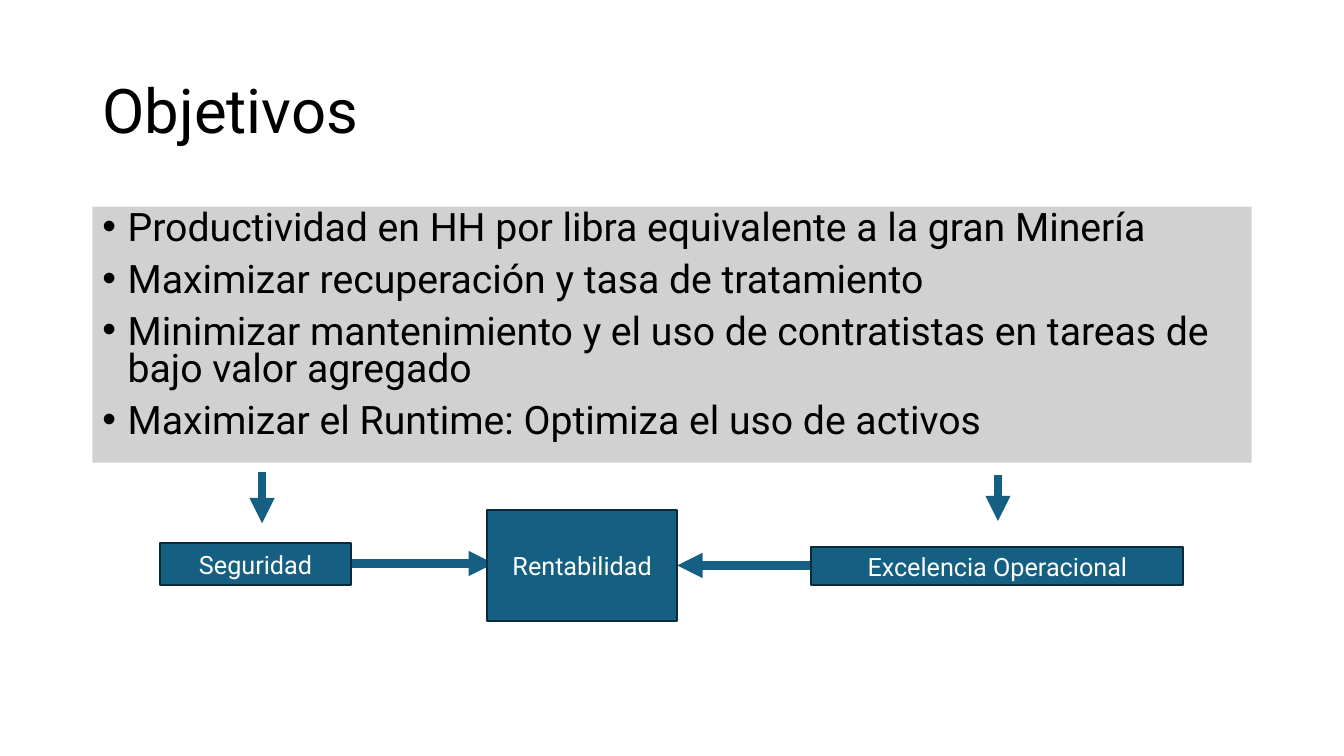
"""Build the slide of goals and the arrows that lead to profit."""
from lxml import etree
from pptx import Presentation
from pptx.dml.color import RGBColor
from pptx.enum.shapes import MSO_CONNECTOR, MSO_SHAPE
from pptx.enum.text import MSO_ANCHOR, MSO_AUTO_SIZE, PP_ALIGN
from pptx.oxml.ns import qn
from pptx.util import Pt

LEFT, MID = PP_ALIGN.LEFT, PP_ALIGN.CENTER
TOP, CENTER = MSO_ANCHOR.TOP, MSO_ANCHOR.MIDDLE
FIXED = MSO_AUTO_SIZE.NONE
RECT, LINE = MSO_SHAPE.RECTANGLE, MSO_CONNECTOR.STRAIGHT
FONT = "Roboto"
HEX = {"ink": "000000", "panel": "D1D1D1", "teal": "156082",
       "edge": "092A39", "light": "FFFFFF"}


def color(name):
    return RGBColor.from_string(HEX[name])


def style(shape, size, ink, align, anchor):
    frame = shape.text_frame
    frame.word_wrap = True
    frame.auto_size = FIXED
    frame.vertical_anchor = anchor
    for para in frame.paragraphs:
        para.alignment = align
        for run in para.runs:
            run.font.name = FONT
            run.font.size = Pt(size)
            run.font.color.rgb = color(ink)


deck = Presentation()
deck.slide_width, deck.slide_height = Pt(960), Pt(540)
slide = deck.slides.add_slide(deck.slide_layouts[1])

title = slide.shapes.title
title.left, title.top, title.width, title.height = Pt(66), Pt(28.75), Pt(828), Pt(104.4)
title.text_frame.text = "Objetivos"
title.text_frame.paragraphs[0].line_spacing = 0.9
style(title, 44, "ink", LEFT, CENTER)

goals = [
    "Productividad en HH por libra equivalente a la gran Minería",
    "Maximizar recuperación y tasa de tratamiento",
    "Minimizar mantenimiento y el uso de contratistas en tareas de bajo valor agregado",
    "Maximizar el Runtime: Optimiza el uso de activos",
]
body = slide.placeholders[1]
body.left, body.top, body.width, body.height = Pt(66), Pt(147.6), Pt(828), Pt(182.9)
body.fill.solid()
body.fill.fore_color.rgb = color("panel")
body.text_frame.text = "\n".join(goals)
style(body, 28, "ink", LEFT, TOP)
for para in body.text_frame.paragraphs:
    para.line_spacing = 0.8
    para.space_before = Pt(10)
    props = para._p.get_or_add_pPr()
    props.set("marL", str(Pt(18)))
    props.set("indent", str(Pt(-18)))
    etree.SubElement(props, qn("a:buFont"), typeface="Arial")
    etree.SubElement(props, qn("a:buChar"), char="•")

arrows = [
    (187.2, 337, 187.2, 373.7),
    (250.6, 402.5, 352.8, 402.5),
    (712.8, 339.1, 712.8, 372.2),
    (579.6, 403.9, 483.8, 403.9),
]
for ends in arrows:
    arrow = slide.shapes.add_connector(LINE, *[Pt(end) for end in ends])
    arrow.line.color.rgb = color("teal")
    arrow.line.width = Pt(6)
    etree.SubElement(arrow.line._get_or_add_ln(), qn("a:tailEnd"), type="triangle")
    etree.SubElement(arrow._element.spPr, qn("a:effectLst"))

boxes = [
    ("Seguridad", 114.5, 388.1, 136.1, 29.5),
    ("Excelencia Operacional", 579.6, 390.6, 265.7, 27.4),
    ("Rentabilidad", 347.8, 364.3, 136.1, 79.2),
]
for label, *area in boxes:
    box = slide.shapes.add_shape(RECT, *[Pt(side) for side in area])
    box.shadow.inherit = False
    box.fill.solid()
    box.fill.fore_color.rgb = color("teal")
    box.line.color.rgb = color("edge")
    box.line.width = Pt(1.5)
    box.text_frame.text = label
    style(box, 18, "light", MID, CENTER)

deck.save("out.pptx")
